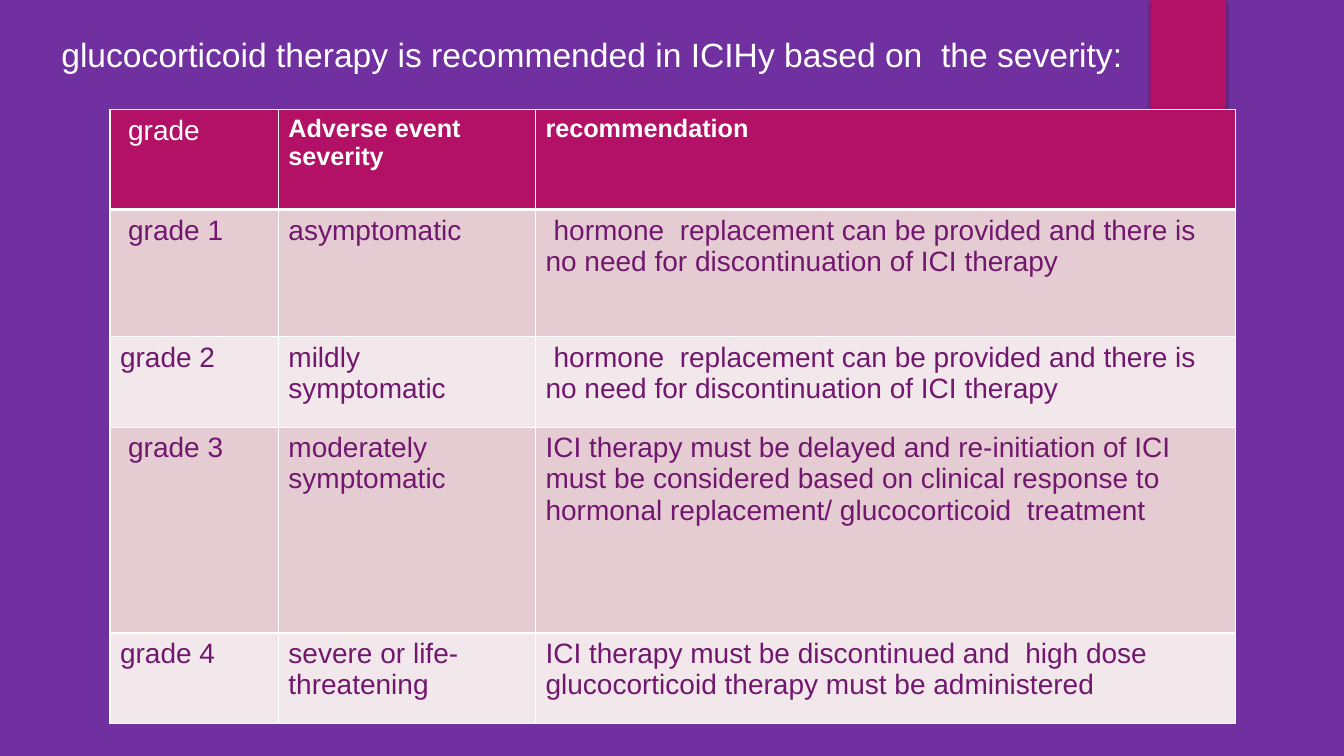
from dataclasses import dataclass
from typing import Any

from lxml.etree import SubElement
from pptx import Presentation
from pptx.dml.color import RGBColor as RGB
from pptx.enum.shapes import MSO_SHAPE as SHAPE
from pptx.enum.text import MSO_ANCHOR as ANCHOR
from pptx.enum.text import MSO_AUTO_SIZE as AUTO
from pptx.oxml.ns import qn
from pptx.util import Inches, Pt

COLORS = {
    "background": "7030A0",
    "accent": "B31166",
    "odd": "E5CCD3",
    "even": "F2E7EA",
    "body": "71186E",
    "white": "FFFFFF",
    "black": "000000",
}
WIDTH, HEIGHT = Inches(13.33), Inches(7.5)
COLUMNS = (12.53, 19.13, 52.06)  # percent of slide width
SPACE = 0.08  # first-line indent, inches


@dataclass(frozen=True)
class Cell:
    text: str
    indent: float = 0
    size: float = 20
    bold: bool = False


@dataclass(frozen=True)
class Row:
    height: float  # percent of slide height
    fill: str
    color: str
    cells: tuple[Cell, ...]


REPLACEMENT = Cell("hormone  replacement can be provided and there is "
                   "no need for discontinuation of ICI therapy", SPACE)
ROWS = (
    Row(13.2, "accent", "white", (
        Cell("grade", SPACE),
        Cell("Adverse event severity", size=18, bold=True),
        Cell("recommendation", size=18, bold=True))),
    Row(16.8, "odd", "body", (
        Cell("grade 1", SPACE), Cell("asymptomatic"), REPLACEMENT)),
    Row(12, "even", "body", (
        Cell("grade 2"), Cell("mildly symptomatic"), REPLACEMENT)),
    Row(27.2, "odd", "body", (
        Cell("grade 3", SPACE), Cell("moderately symptomatic"),
        Cell("ICI therapy must be delayed and re-initiation of ICI must be "
             "considered based on clinical response to hormonal replacement/ "
             "glucocorticoid  treatment"))),
    Row(12, "even", "body", (
        Cell("grade 4"), Cell("severe or life-threatening"),
        Cell("ICI therapy must be discontinued and  high dose "
             "glucocorticoid therapy must be administered"))),
)


def across(percent: float) -> int:
    return round(WIDTH * percent / 100)


def down(percent: float) -> int:
    return round(HEIGHT * percent / 100)


def paint(fill: Any, color: str) -> None:
    fill.solid()
    fill.fore_color.rgb = RGB.from_string(COLORS[color])


def write(tf: Any, text: str, *, size: float, color: str,
          bold: bool = False, indent: float = 0) -> None:
    p = tf.paragraphs[0]
    if indent:
        p._p.get_or_add_pPr().set("indent", str(Inches(indent)))
    r = p.add_run()
    r.text = text
    r.font.name = "Arial"
    r.font.size = Pt(size)
    r.font.bold = bold
    r.font.color.rgb = RGB.from_string(COLORS[color])


def add_borders(cell: Any, top: float, bottom: float) -> None:
    tc_pr = cell._tc.get_or_add_tcPr()
    sides = {"lnL": 1, "lnR": 1, "lnT": top, "lnB": bottom}
    for i, (side, width) in enumerate(sides.items()):
        ln = SubElement(tc_pr, qn(f"a:{side}"), w=str(Pt(width)))
        solid = SubElement(ln, qn("a:solidFill"))
        SubElement(solid, qn("a:srgbClr"), val=COLORS["white"])
        tc_pr.insert(i, ln)


def add_shadow(sp: Any) -> None:
    effects = SubElement(sp._element.spPr, qn("a:effectLst"))
    shadow = SubElement(effects, qn("a:outerShdw"), blurRad=str(Pt(3)),
                        dist=str(Pt(2)), dir="5400000", rotWithShape="0")
    color = SubElement(shadow, qn("a:srgbClr"), val=COLORS["black"])
    SubElement(color, qn("a:alpha"), val="45000")


def add_tab(s: Any) -> None:
    sp = s.shapes.add_shape(SHAPE.RECTANGLE, across(85.6), 0,
                            across(5.63), down(16.67))
    paint(sp.fill, "accent")
    sp.line.fill.background()
    add_shadow(sp)


def add_grades(s: Any) -> None:
    frame = s.shapes.add_table(
        len(ROWS), len(COLUMNS), across(8.18), down(14.53),
        across(sum(COLUMNS)), down(sum(row.height for row in ROWS)))
    table = frame.table
    table.horz_banding = False
    for column, width in zip(table.columns, COLUMNS):
        column.width = across(width)
    for i, row in enumerate(ROWS):
        table.rows[i].height = down(row.height)
        for j, item in enumerate(row.cells):
            cell = table.cell(i, j)
            paint(cell.fill, row.fill)
            add_borders(cell, top=3 if i == 1 else 1, bottom=3 if i == 0 else 1)
            write(cell.text_frame, item.text, size=item.size, color=row.color,
                  bold=item.bold, indent=item.indent)


def add_title(s: Any) -> None:
    sp = s.shapes.add_textbox(across(3.23), down(3.87), across(81.25), down(6.67))
    tf = sp.text_frame
    tf.word_wrap = True
    tf.auto_size = AUTO.SHAPE_TO_FIT_TEXT
    tf.vertical_anchor = ANCHOR.TOP
    write(tf, "glucocorticoid therapy is recommended in ICIHy based on  the severity:",
          size=24, color="white", indent=SPACE)


def main() -> None:
    prs = Presentation()
    prs.slide_width, prs.slide_height = WIDTH, HEIGHT
    s = prs.slides.add_slide(prs.slide_layouts[6])
    paint(s.background.fill, "background")

    # Corner tab, table of grades, heading
    add_tab(s)
    add_grades(s)
    add_title(s)
    prs.save("out.pptx")


if __name__ == "__main__":
    main()
